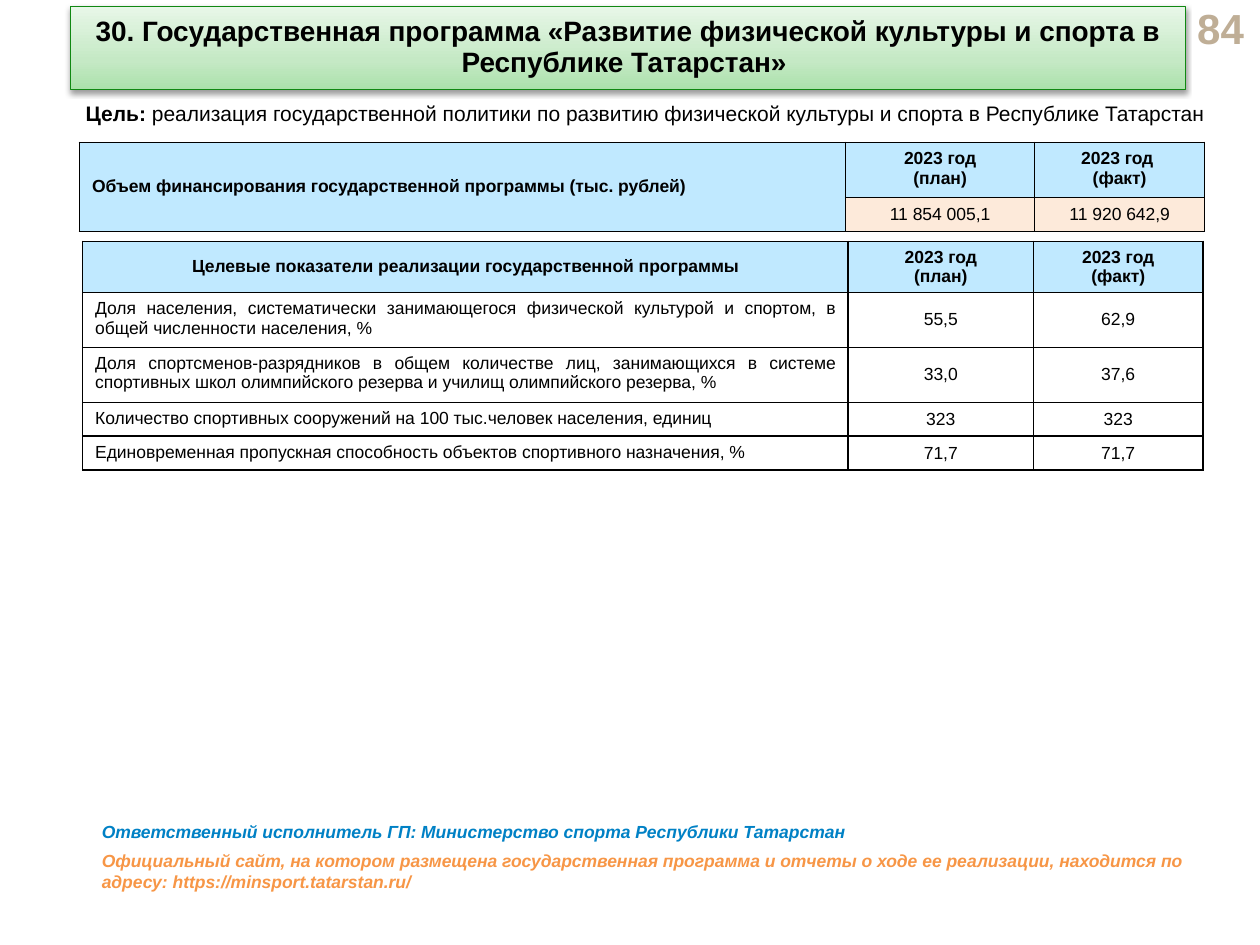
"""Build the slide on the state programme for physical culture and sport."""
from dataclasses import dataclass

from pptx import Presentation
from pptx.dml.color import RGBColor
from pptx.enum import text
from pptx.oxml import parse_xml
from pptx.oxml.ns import nsdecls
from pptx.util import Pt

BLACK = RGBColor(0x00, 0x00, 0x00)
WHITE = RGBColor(0xFF, 0xFF, 0xFF)
GREEN = RGBColor(0x10, 0x88, 0x12)
SKY = RGBColor(0xC0, 0xE9, 0xFF)
PEACH = RGBColor(0xFD, 0xEA, 0xDA)
BLUE = RGBColor(0x00, 0x81, 0xC5)
ORANGE = RGBColor(0xF7, 0x96, 0x46)
TAUPE = RGBColor(0xBF, 0xAE, 0x96)
TITLE_STOPS = (
    (0, RGBColor(0xAB, 0xE1, 0xAB)),
    (35, RGBColor(0xC5, 0xE9, 0xC5)),
    (100, RGBColor(0xE8, 0xF7, 0xE8)),
)
LEFT, CENTER, RIGHT, JUSTIFY = (
    text.PP_ALIGN.LEFT, text.PP_ALIGN.CENTER, text.PP_ALIGN.RIGHT, text.PP_ALIGN.JUSTIFY
)
TOP, MIDDLE = text.MSO_ANCHOR.TOP, text.MSO_ANCHOR.MIDDLE
DEFAULT_MARGINS = (7.2, 3.6, 7.2, 3.6)
NO_MARGINS = (0, 0, 0, 0)
AMOUNT_MARGINS = (0.72, 0.72, 0.72, 0)


@dataclass(frozen=True)
class Box:
    left: float
    top: float
    width: float
    height: float


@dataclass(frozen=True)
class Style:
    size: float = 10
    color: RGBColor = BLACK
    bold: bool = False
    italic: bool = False
    align: text.PP_ALIGN = LEFT


@dataclass(frozen=True)
class Entry:
    words: str
    style: Style
    fill: RGBColor = WHITE
    anchor: text.MSO_ANCHOR = MIDDLE
    margins: tuple[float, ...] = DEFAULT_MARGINS


@dataclass(frozen=True)
class Note:
    box: Box
    words: str
    style: Style
    anchor: text.MSO_ANCHOR = TOP


HEADER = Style(bold=True, align=CENTER)
NUMBER = Style(align=CENTER)
INDICATOR = Style(align=JUSTIFY)

INDICATORS = (
    ("Доля населения, систематически занимающегося физической культурой и спортом, "
     "в общей численности населения, %", "55,5", "62,9"),
    ("Доля спортсменов-разрядников в общем количестве лиц, занимающихся в системе "
     "спортивных школ олимпийского резерва и училищ олимпийского резерва, %", "33,0", "37,6"),
    ("Количество спортивных сооружений на 100 тыс.человек населения, единиц", "323", "323"),
    ("Единовременная пропускная способность объектов спортивного назначения, %", "71,7", "71,7"),
)
FUNDING_ROWS = [
    [Entry("Объем финансирования государственной программы (тыс. рублей)", Style(bold=True), SKY),
     Entry("2023 год\n(план)", HEADER, SKY, TOP),
     Entry("2023 год \n(факт)", HEADER, SKY, TOP)],
    [Entry("", NUMBER, SKY)]
    + [Entry(amount, NUMBER, PEACH, margins=AMOUNT_MARGINS)
       for amount in ("11 854 005,1", "11 920 642,9")],
]
INDICATOR_ROWS = [
    [Entry(words, HEADER, SKY, margins=NO_MARGINS) for words in (
        "Целевые показатели реализации государственной программы",
        "2023 год\v(план)", "2023 год\v(факт)")]
] + [
    [Entry(name, INDICATOR, anchor=TOP), Entry(plan, NUMBER), Entry(fact, NUMBER)]
    for name, plan, fact in INDICATORS
]
NOTES = (
    Note(Box(671.8, 3.6, 46.1, 24.5), "84", Style(24, TAUPE, True, align=RIGHT), MIDDLE),
    Note(Box(51.1, 465.8, 640.1, 19.4),
         "Ответственный исполнитель ГП: Министерство спорта Республики Татарстан",
         Style(color=BLUE, bold=True, italic=True)),
    Note(Box(51.1, 482.4, 635.8, 31.7),
         "Официальный сайт, на котором размещена государственная программа и отчеты о ходе "
         "ее реализации, находится по адресу: https://minsport.tatarstan.ru/",
         Style(color=ORANGE, bold=True, italic=True)),
)


def format_text(frame, style: Style) -> None:
    for paragraph in frame.paragraphs:
        paragraph.alignment = style.align
        font = paragraph.font
        font.name, font.size = "Arial", Pt(style.size)
        font.bold, font.italic = style.bold, style.italic
        font.color.rgb = style.color


def add_title(slide, box: Box, words: str) -> None:
    title = slide.shapes.title
    title.left, title.top = Pt(box.left), Pt(box.top)
    title.width, title.height = Pt(box.width), Pt(box.height)
    stops = "".join(
        f'<a:gs pos="{position * 1000}"><a:srgbClr val="{color}"/></a:gs>'
        for position, color in TITLE_STOPS)
    properties = title._element.spPr
    properties.append(parse_xml(
        f'<a:prstGeom {nsdecls("a")} prst="roundRect"><a:avLst/></a:prstGeom>'))
    properties.append(parse_xml(
        f'<a:gradFill {nsdecls("a")} rotWithShape="1"><a:gsLst>{stops}</a:gsLst>'
        '<a:lin ang="16200000" scaled="1"/></a:gradFill>'))
    title.line.color.rgb = GREEN
    title.line.width = Pt(0.75)
    properties.append(parse_xml(
        f'<a:effectLst {nsdecls("a")}><a:outerShdw blurRad="{Pt(3.1)}" dist="{Pt(1.6)}" '
        'dir="5400000" rotWithShape="0"><a:srgbClr val="000000"><a:alpha val="38000"/>'
        '</a:srgbClr></a:outerShdw></a:effectLst>'))
    frame = title.text_frame
    frame.text = words
    frame.word_wrap = True
    frame.auto_size = text.MSO_AUTO_SIZE.NONE
    frame.vertical_anchor = MIDDLE
    frame.paragraphs[0].line_spacing = 0.9
    format_text(frame, Style(16, bold=True, align=CENTER))


def add_note(slide, note: Note):
    box = note.box
    shape = slide.shapes.add_textbox(Pt(box.left), Pt(box.top), Pt(box.width), Pt(box.height))
    frame = shape.text_frame
    frame.word_wrap = True
    frame.vertical_anchor = note.anchor
    frame.text = note.words
    format_text(frame, note.style)
    return frame.paragraphs[0]


def fill_cell(cell, entry: Entry) -> None:
    cell.text_frame.text = entry.words
    format_text(cell.text_frame, entry.style)
    cell.vertical_anchor = entry.anchor
    cell.margin_left, cell.margin_top, cell.margin_right, cell.margin_bottom = map(
        Pt, entry.margins)
    properties = cell._tc.get_or_add_tcPr()
    for side in "LRTB":
        properties.append(parse_xml(
            f'<a:ln{side} {nsdecls("a")} w="{Pt(1)}"><a:solidFill>'
            f'<a:srgbClr val="{BLACK}"/></a:solidFill></a:ln{side}>'))
    cell.fill.solid()
    cell.fill.fore_color.rgb = entry.fill


def add_grid(slide, left: float, top: float, widths: tuple[float, ...],
             heights: tuple[float, ...], rows: list[list[Entry]]):
    table = slide.shapes.add_table(
        len(heights), len(widths), Pt(left), Pt(top), Pt(sum(widths)), Pt(sum(heights))).table
    for column, width in zip(table.columns, widths):
        column.width = Pt(width)
    for row, height, entries in zip(table.rows, heights, rows):
        row.height = Pt(height)
        for cell, entry in zip(row.cells, entries):
            fill_cell(cell, entry)
    return table


def main() -> None:
    presentation = Presentation()
    presentation.slide_width, presentation.slide_height = Pt(720), Pt(540)
    slide = presentation.slides.add_slide(presentation.slide_layouts[5])
    add_title(slide, Box(40.3, 3.6, 637.2, 47.5),
              "30. Государственная программа «Развитие физической культуры и спорта "
              "в Республике Татарстан» ")
    goal = add_note(slide, Note(Box(41.8, 55.4, 671, 434.9), "Цель: ", Style(12)))
    goal.line_spacing = 0.9
    goal.runs[0].font.bold = True
    goal.add_run().text = ("реализация государственной политики по развитию физической культуры "
                           "и спорта в Республике Татарстан")
    funding = add_grid(slide, 45.4, 81.4, (437.8, 108, 97.2), (31.4, 19.4), FUNDING_ROWS)
    funding.cell(0, 0).merge(funding.cell(1, 0))
    add_grid(slide, 47.2, 137.9, (437.4, 106, 96.8), (29.2, 31.4, 31.4, 19.4, 19.4),
             INDICATOR_ROWS)
    for note in NOTES:
        add_note(slide, note)
    presentation.save("out.pptx")


if __name__ == "__main__":
    main()
